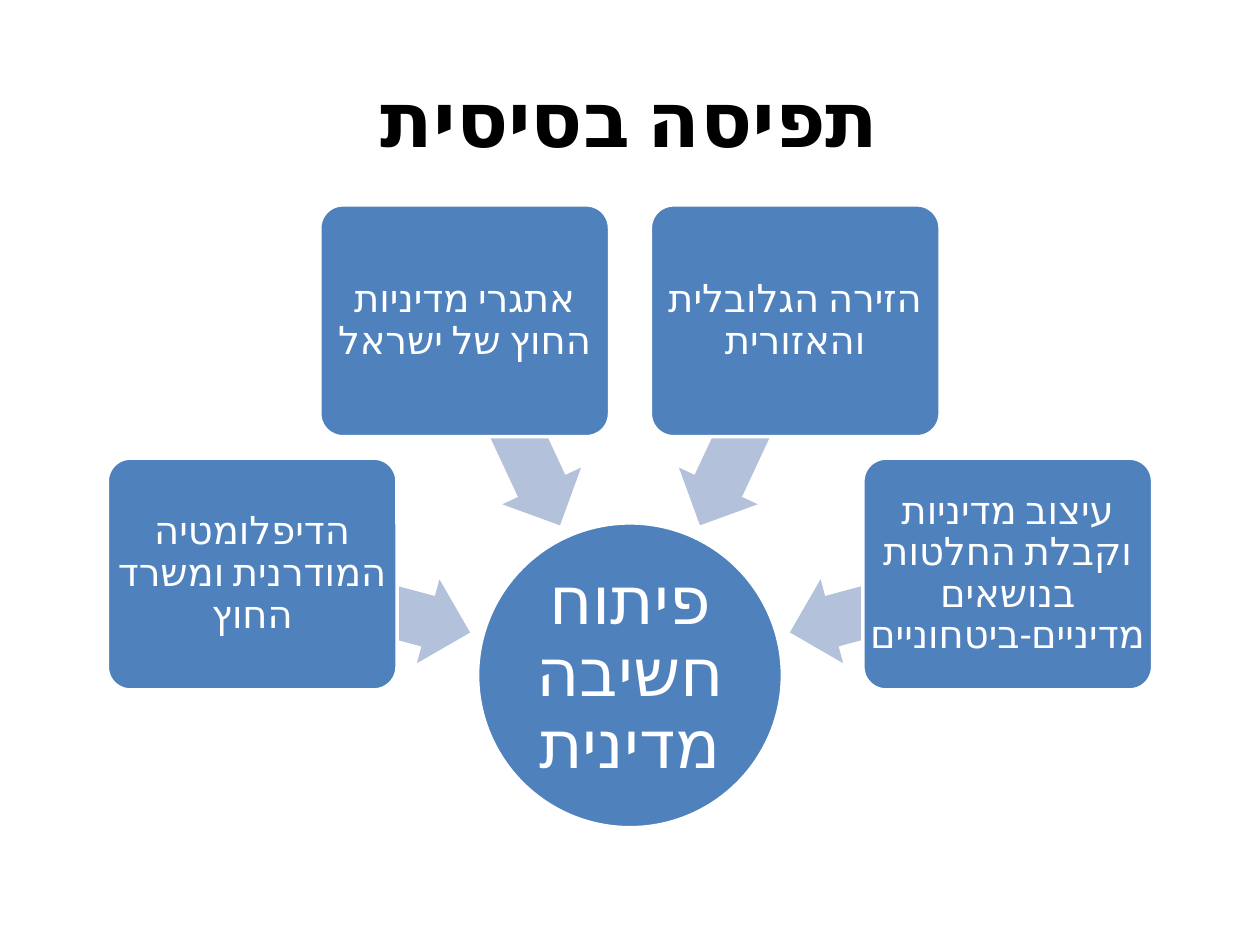
from dataclasses import dataclass
from math import cos, radians, sin

from lxml.etree import SubElement
from pptx import Presentation
from pptx.dml.color import RGBColor
from pptx.enum.shapes import MSO_SHAPE
from pptx.enum.text import MSO_ANCHOR, PP_ALIGN
from pptx.oxml.ns import qn
from pptx.shapes.autoshape import Shape
from pptx.slide import Slide
from pptx.text.text import TextFrame
from pptx.util import Pt


@dataclass(frozen=True)
class Theme:
    """Colours, font and type sizes of the slide."""
    font: str = "Calibri"
    blue: RGBColor = RGBColor(0x4F, 0x81, 0xBD)
    pale: RGBColor = RGBColor(0xB3, 0xC1, 0xDB)
    white: RGBColor = RGBColor(0xFF, 0xFF, 0xFF)
    black: RGBColor = RGBColor(0, 0, 0)
    title: float = 44
    hub: float = 38
    topic: float = 22
    outline: float = 2


@dataclass(frozen=True)
class Topic:
    """A box around the hub, placed by its angle in degrees."""
    angle: float
    text: str


THEME = Theme()
HUB_X, HUB_Y, HUB_SIZE = 360, 385.9, 174.2
BOX_W, BOX_H, BOX_RADIUS = 165.6, 132.5, 223.5
ARROW_W, ARROW_H, ARROW_RADIUS = 129.6, 49.7, 159.4
TOPICS = (
    Topic(195, "הדיפלומטיה המודרנית ומשרד החוץ"),
    Topic(245, "אתגרי מדיניות החוץ של ישראל"),
    Topic(295, "הזירה הגלובלית והאזורית"),
    Topic(345, "עיצוב מדיניות וקבלת החלטות בנושאים מדיניים-ביטחוניים"),
)


def write(tf: TextFrame, text: str, size: float, color: RGBColor,
          bold: bool = False, spacing: float = 0.9, inset: float = 0) -> None:
    """Write one centred right-to-left paragraph."""
    tf.word_wrap = True
    tf.vertical_anchor = MSO_ANCHOR.MIDDLE
    tf.margin_left = tf.margin_right = tf.margin_top = tf.margin_bottom = Pt(inset)
    p = tf.paragraphs[0]
    p.alignment = PP_ALIGN.CENTER
    p.line_spacing = spacing
    p._p.get_or_add_pPr().set("rtl", "1")
    r = p.add_run()
    r.text = text
    r.font.size = Pt(size)
    r.font.bold = bold
    r.font.name = THEME.font
    r.font.color.rgb = color
    rpr = r._r.get_or_add_rPr()
    rpr.set("lang", "he-IL")
    SubElement(rpr, qn("a:cs")).set("typeface", THEME.font)


def add_centred(s: Slide, kind: MSO_SHAPE, x: float, y: float, w: float,
                h: float, fill: RGBColor) -> Shape:
    """Add a flat shape centred on a point."""
    sp = s.shapes.add_shape(kind, Pt(x - w / 2), Pt(y - h / 2), Pt(w), Pt(h))
    sp.shadow.inherit = False
    sp.fill.solid()
    sp.fill.fore_color.rgb = fill
    sp.line.fill.background()
    return sp


def outline(sp: Shape) -> None:
    """Give a shape the white outline."""
    sp.line.color.rgb = THEME.white
    sp.line.width = Pt(THEME.outline)


def on_ring(angle: float, radius: float) -> tuple[float, float]:
    """Return the point at an angle and distance from the hub."""
    a = radians(angle)
    return HUB_X + radius * cos(a), HUB_Y + radius * sin(a)


def add_hub(s: Slide, text: str) -> None:
    """Add the central circle."""
    sp = add_centred(s, MSO_SHAPE.OVAL, HUB_X, HUB_Y, HUB_SIZE, HUB_SIZE, THEME.blue)
    outline(sp)
    write(sp.text_frame, text, THEME.hub, THEME.white)


def add_topic(s: Slide, topic: Topic) -> None:
    """Add a topic box and its arrow towards the hub."""
    x, y = on_ring(topic.angle, ARROW_RADIUS)
    arrow = add_centred(s, MSO_SHAPE.LEFT_ARROW, x, y, ARROW_W, ARROW_H, THEME.pale)
    arrow.adjustments[0] = 0.6
    arrow.adjustments[1] = 0.5
    arrow.rotation = topic.angle
    x, y = on_ring(topic.angle, BOX_RADIUS)
    box = add_centred(s, MSO_SHAPE.ROUNDED_RECTANGLE, x, y, BOX_W, BOX_H, THEME.blue)
    box.adjustments[0] = 0.1
    outline(box)
    write(box.text_frame, topic.text, THEME.topic, THEME.white)


def add_title(s: Slide, text: str) -> None:
    """Add the slide title."""
    sp = s.shapes.add_textbox(Pt(36), Pt(21.6), Pt(648), Pt(90))
    write(sp.text_frame, text, THEME.title, THEME.black, bold=True, spacing=1.0, inset=3.6)


def main() -> None:
    """Build and save the slide."""
    prs = Presentation()
    prs.slide_width, prs.slide_height = Pt(720), Pt(540)
    s = prs.slides.add_slide(prs.slide_layouts[6])
    add_hub(s, "פיתוח חשיבה מדינית")
    for topic in TOPICS:
        add_topic(s, topic)
    add_title(s, "תפיסה בסיסית")
    prs.save("out.pptx")


if __name__ == "__main__":
    main()
